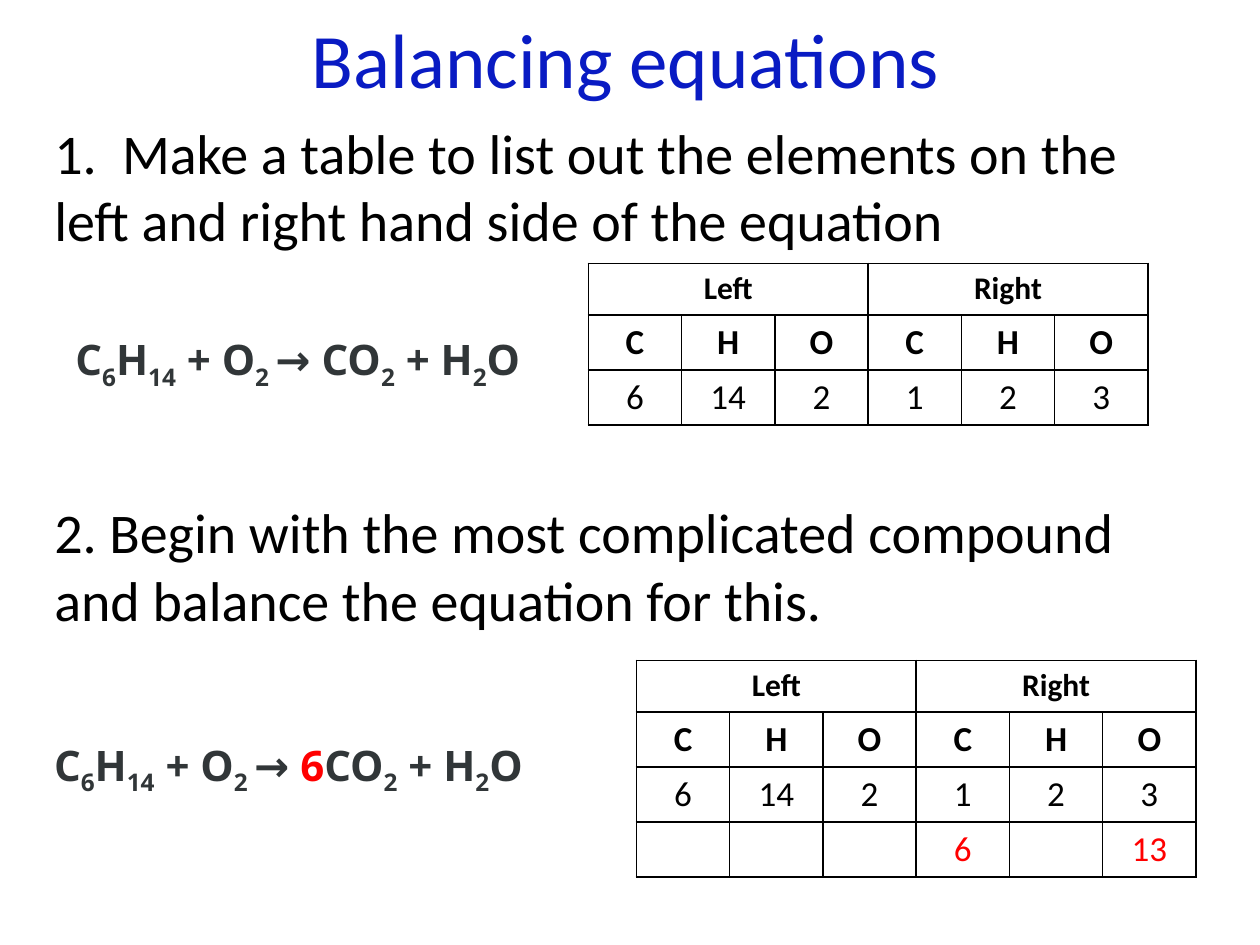
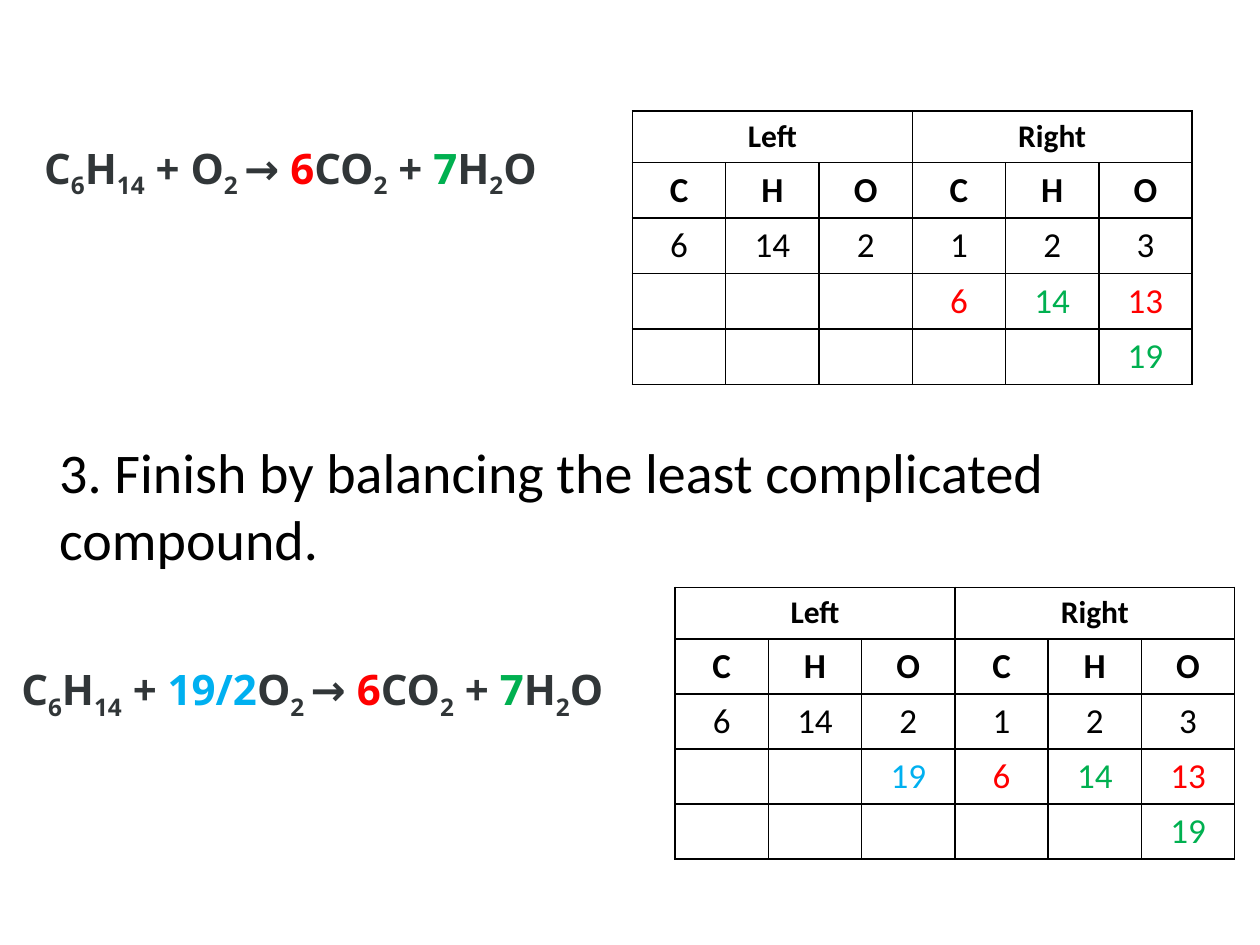
"""Build two slides on balancing the combustion of hexane."""
from itertools import groupby

from lxml.etree import SubElement
from pptx import Presentation
from pptx.dml.color import RGBColor
from pptx.enum.text import MSO_ANCHOR as Anchor, MSO_AUTO_SIZE as AutoSize, PP_ALIGN as Align
from pptx.oxml.ns import qn
from pptx.util import Cm, Pt

BLACK = RGBColor(0x00, 0x00, 0x00)
TITLE_BLUE = RGBColor(0x09, 0x1B, 0xC3)
SLATE = RGBColor(0x31, 0x36, 0x38)
RED = RGBColor(0xFF, 0x00, 0x00)
GREEN = RGBColor(0x00, 0xB0, 0x50)
SKY = RGBColor(0x00, 0xB0, 0xF0)

ELEMENTS = "CHO" * 2
START_COUNTS = ("6", "14", "2", "1", "2", "3")
SIX = ("6", RED)
SEVEN = ("7", GREEN)
CARBON_STEP = {3: SIX, 5: ("13", RED)}
HYDROGEN_STEP = CARBON_STEP | {4: ("14", GREEN)}
OXYGEN_STEP = HYDROGEN_STEP | {2: ("19", SKY)}
OXYGEN_TOTAL = {5: ("19", GREEN)}


class Lesson:
    """Hold the lesson's style and current slide, and add its elements."""

    text_font = "Calibri"
    formula_font = "Open Sans"
    column_width = Cm(1.88)
    header_height = Cm(1.04)
    row_height = Cm(1.11)

    def __init__(self):
        self.deck = Presentation()
        self.deck.slide_width, self.deck.slide_height = Cm(25.4), Cm(19.05)
        self.slide = None

    def new_slide(self):
        self.slide = self.deck.slides.add_slide(self.deck.slide_layouts[1])

    def place(self, element, left, top, width, height):
        element.left, element.top = Cm(left), Cm(top)
        element.width, element.height = Cm(width), Cm(height)

    def run(self, paragraph, text, size, color=BLACK, bold=False, font=text_font, sub=False):
        run = paragraph.add_run()
        run.text = text
        run.font.name, run.font.size, run.font.bold = font, Pt(size), bold
        run.font.color.rgb = color
        if sub:
            run._r.get_or_add_rPr().set("baseline", "-25000")

    def title(self, text, *box):
        heading = self.slide.shapes.title
        self.place(heading, *box)
        frame = heading.text_frame
        frame.vertical_anchor, frame.auto_size = Anchor.MIDDLE, AutoSize.NONE
        frame.paragraphs[0].alignment = Align.CENTER
        self.run(frame.paragraphs[0], text, 44, TITLE_BLUE)

    def remove_title(self):
        heading = self.slide.shapes.title
        heading._element.getparent().remove(heading._element)

    def steps(self, texts, *box, gap=0):
        body = self.slide.placeholders[1]
        self.place(body, *box)
        frame = body.text_frame
        frame.auto_size = AutoSize.NONE
        for index, text in enumerate(texts):
            step = frame.add_paragraph() if index else frame.paragraphs[0]
            step.space_before = Pt(gap if index else 6.4)
            properties = step._p.get_or_add_pPr()
            properties.set("marL", "0")
            properties.set("indent", "0")
            SubElement(properties, qn("a:buNone"))
            self.run(step, text, 32)

    def equation(self, left, top, width, oxygen=None, dioxide=None, water=None):
        box = self.slide.shapes.add_textbox(Cm(left), Cm(top), Cm(width), Cm(1.27))
        frame = box.text_frame
        frame.word_wrap, frame.auto_size = True, AutoSize.SHAPE_TO_FIT_TEXT
        line = frame.paragraphs[0]

        def add(text, color=SLATE, sub=False):
            self.run(line, text, 24, color, True, self.formula_font, sub)

        def compound(formula, coefficient=None):
            if coefficient:
                add(*coefficient)
            for is_count, symbols in groupby(formula, str.isdigit):
                add("".join(symbols), sub=is_count)

        compound("C6H14")
        add(" + ")
        compound("O2", oxygen)
        add(" ", sub=True)
        add("→ ")
        compound("CO2", dioxide)
        add(" + ")
        compound("H2O", water)

    def cell(self, cell, text, size, color=BLACK, bold=False):
        line = cell.text_frame.paragraphs[0]
        line.alignment = Align.CENTER
        self.run(line, text, size, color, bold)

    def tally(self, left, top, *balancing):
        rows, columns = 3 + len(balancing), len(ELEMENTS)
        height = self.header_height + (rows - 1) * self.row_height
        table = self.slide.shapes.add_table(
            rows, columns, Cm(left), Cm(top), columns * self.column_width, height).table
        table.first_row = table.horz_banding = False
        for column in table.columns:
            column.width = self.column_width
        for index, row in enumerate(table.rows):
            row.height = self.row_height if index else self.header_height
        for cell in table.iter_cells():
            self.outline(cell)
            cell.fill.background()
        for first, side in ((0, "Left"), (3, "Right")):
            table.cell(0, first).merge(table.cell(0, first + 2))
            self.cell(table.cell(0, first), side, 18, bold=True)
        for column, (element, count) in enumerate(zip(ELEMENTS, START_COUNTS)):
            self.cell(table.cell(1, column), element, 20, bold=True)
            self.cell(table.cell(2, column), count, 20)
        for row, changes in enumerate(balancing, start=3):
            for column, (count, color) in changes.items():
                self.cell(table.cell(row, column), count, 20, color)

    def outline(self, cell):
        properties = cell._tc.get_or_add_tcPr()
        for side in ("lnL", "lnR", "lnT", "lnB"):
            edge = SubElement(properties, qn(f"a:{side}"), w=str(Pt(1)))
            fill = SubElement(edge, qn("a:solidFill"))
            SubElement(fill, qn("a:srgbClr"), val=str(BLACK))


def main():
    lesson = Lesson()

    lesson.new_slide()
    lesson.title("Balancing equations", 1.19, 0.05, 22.86, 2.21)
    lesson.steps(
        ("1.  Make a table to list out the elements on the left and right hand side of the equation",
         "2. Begin with the most complicated compound and balance the equation for this."),
        0.84, 2.26, 22.86, 12.57, gap=140)
    lesson.equation(1.27, 6.6, 11)
    lesson.tally(11.86, 5.31)
    lesson.tally(12.83, 13.31, CARBON_STEP)
    lesson.equation(0.84, 14.78, 11, dioxide=SIX)

    lesson.new_slide()
    lesson.remove_title()
    lesson.steps(("3. Finish by balancing the least complicated compound.",),
                 0.94, 8.69, 22.86, 9.19)
    lesson.tally(12.75, 2.24, HYDROGEN_STEP, OXYGEN_TOTAL)
    lesson.equation(0.64, 2.74, 11.73, dioxide=SIX, water=SEVEN)
    lesson.equation(0.18, 13.26, 13.54, oxygen=("19/2", SKY), dioxide=SIX, water=SEVEN)
    lesson.tally(13.61, 11.84, OXYGEN_STEP, OXYGEN_TOTAL)

    lesson.deck.save("out.pptx")


if __name__ == "__main__":
    main()
